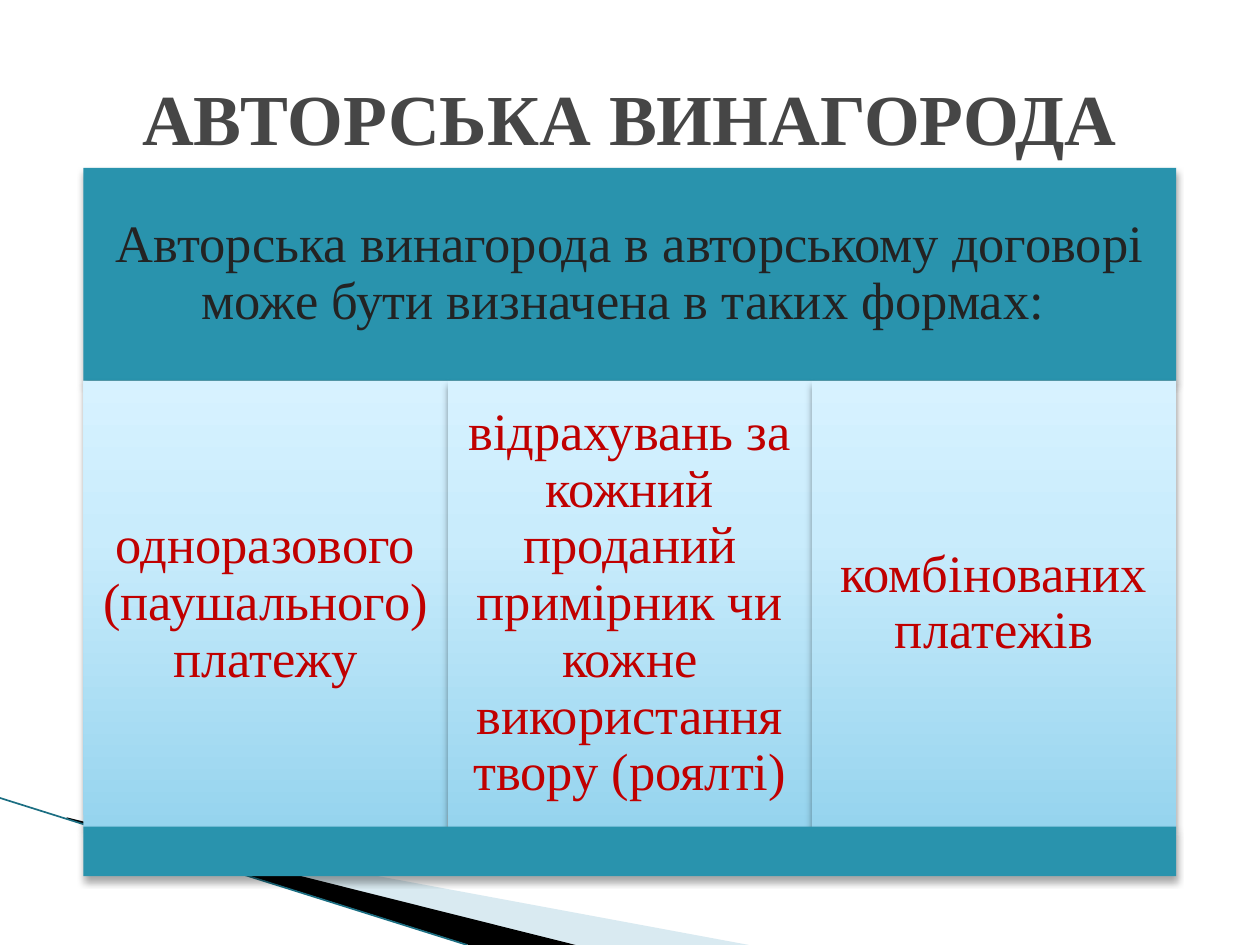
from lxml.etree import SubElement
from pptx import Presentation
from pptx.dml.color import RGBColor
from pptx.enum.shapes import MSO_CONNECTOR, MSO_SHAPE
from pptx.enum.text import MSO_ANCHOR, PP_ALIGN
from pptx.oxml import parse_xml
from pptx.oxml.ns import nsdecls, qn
from pptx.util import Pt

# Content
TITLE = "АВТОРСЬКА ВИНАГОРОДА"
HEADING = "Авторська винагорода в авторському договорі може бути визначена в таких формах: "
FORMS = [
    "одноразового (паушального) платежу",
    "відрахувань за кожний проданий примірник чи кожне використання твору (роялті)",
    "комбінованих платежів",
]

# Formats, lengths in points
FONT = "Times New Roman"
TEAL = "2993AD"
GRADIENT = [(0, "96D4EE"), (65, "C9ECFC"), (100, "D7F2FF")]
TITLE_FONT = {"name": FONT, "size": Pt(41), "bold": True}
BODY_FONT = {"name": FONT, "size": Pt(30), "bold": False}
FRAME = {"word_wrap": True, "vertical_anchor": MSO_ANCHOR.MIDDLE}
INSETS = {f"margin_{side}": Pt(8.64) for side in ("left", "top", "right", "bottom")}
LEFT, TOP, WIDTH = 47.7, 95.9, 624.4
HEADING_H, FORMS_H, FOOTER_H = 121.6, 254.9, 28.3

# Swooshes: corner points, colour, opacity in percent
SWOOSHES = [
    ([(39.6, 468.5), (428.4, 540), (328.3, 540), (39.6, 468)], "A0CBDC", 40),
    ([(38.2, 467.3), (329, 540), (267.8, 540), (38.9, 468)], "000000", 100),
]


def color(hex_code):
    return RGBColor.from_string(hex_code)


def apply(target, values):
    for name, value in values.items():
        setattr(target, name, value)


def write(frame, text, font, hex_code, spacing):
    apply(frame, FRAME)
    frame.text = text
    paragraph = frame.paragraphs[0]
    apply(paragraph, {"alignment": PP_ALIGN.CENTER, "line_spacing": spacing})
    run_font = paragraph.runs[0].font
    apply(run_font, font)
    run_font.color.rgb = color(hex_code)


def add_shadow(shape):
    shape.shadow.inherit = False
    effects = shape.element.spPr.find(qn("a:effectLst"))
    shadow = SubElement(effects, qn("a:outerShdw"), blurRad=str(Pt(4)), dist=str(Pt(3)),
                        dir="5400000", algn="ctr", rotWithShape="0")
    black = SubElement(shadow, qn("a:srgbClr"), val="000000")
    SubElement(black, qn("a:alpha"), val="35000")


def fill_gradient(shape):
    stops = "".join(f'<a:gs pos="{pos * 1000}"><a:srgbClr val="{code}"/></a:gs>'
                    for pos, code in GRADIENT)
    gradient = parse_xml(f'<a:gradFill {nsdecls("a")} rotWithShape="1"><a:gsLst>{stops}</a:gsLst>'
                         '<a:lin ang="16200000" scaled="0"/></a:gradFill>')
    shape.element.spPr.find(qn("a:prstGeom")).addnext(gradient)


def add_panel(slide, left, top, width, height, fill=None, text="", text_color="232323"):
    panel = slide.shapes.add_shape(MSO_SHAPE.RECTANGLE, Pt(left), Pt(top), Pt(width), Pt(height))
    panel.line.fill.background()
    if fill:
        panel.fill.solid()
        panel.fill.fore_color.rgb = color(fill)
    else:
        fill_gradient(panel)
    add_shadow(panel)
    if text:
        apply(panel.text_frame, INSETS)
        write(panel.text_frame, text, BODY_FONT, text_color, 0.9)


def add_swoosh(slide, corners, hex_code, opacity):
    builder = slide.shapes.build_freeform(*corners[0], scale=Pt(1))
    builder.add_line_segments(corners[1:], close=True)
    swoosh = builder.convert_to_shape()
    swoosh.shadow.inherit = False
    swoosh.line.fill.background()
    swoosh.fill.solid()
    swoosh.fill.fore_color.rgb = color(hex_code)
    if opacity < 100:
        tint = swoosh.element.spPr.find(qn("a:solidFill"))[0]
        SubElement(tint, qn("a:alpha"), val=str(opacity * 1000))


def main():
    deck = Presentation()
    apply(deck, {"slide_width": Pt(720), "slide_height": Pt(540)})
    slide = deck.slides.add_slide(deck.slide_layouts[5])

    # Background swooshes and their edge
    for swoosh in SWOOSHES:
        add_swoosh(slide, *swoosh)
    edge = slide.shapes.add_connector(MSO_CONNECTOR.STRAIGHT, Pt(0), Pt(456), Pt(267), Pt(540))
    edge.line.width = Pt(0.95)
    edge.line.color.rgb = color("1B6E82")
    SubElement(edge.element.spPr, qn("a:effectLst"))

    # Title
    title = slide.shapes.title
    apply(title, {"left": Pt(36), "top": Pt(21.6), "width": Pt(648), "height": Pt(90)})
    write(title.text_frame, TITLE, TITLE_FONT, "464646", 1.0)

    # Heading, one column per form, footer bar
    forms_top = TOP + HEADING_H
    column = WIDTH / len(FORMS)
    add_panel(slide, LEFT, TOP, WIDTH, HEADING_H, TEAL, HEADING)
    for i, form in enumerate(FORMS):
        add_panel(slide, LEFT + i * column, forms_top, column, FORMS_H,
                  text=form, text_color="C00000")
    add_panel(slide, LEFT, forms_top + FORMS_H, WIDTH, FOOTER_H, TEAL)

    deck.save("out.pptx")


if __name__ == "__main__":
    main()
